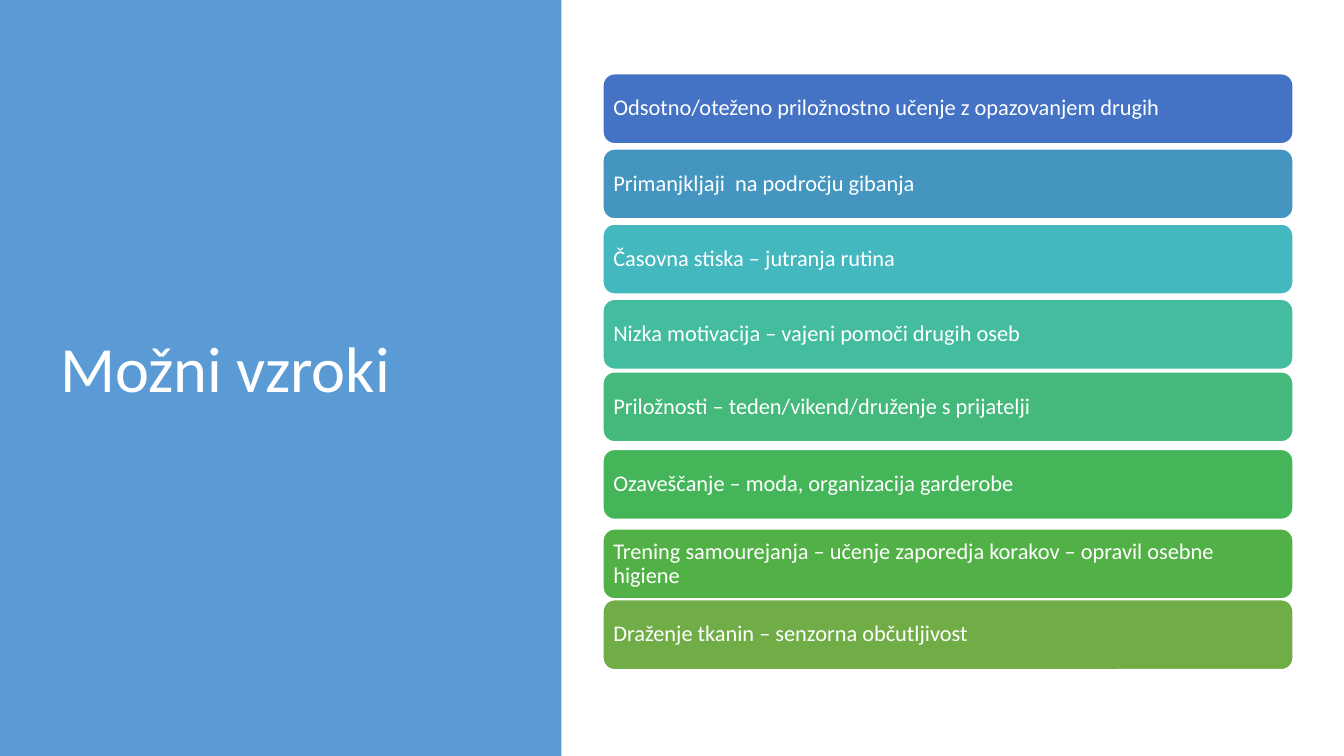
from pptx import Presentation, util as u
from pptx.dml.color import RGBColor
from pptx.enum import shapes, text

COLORS = {"panel": "5B9BD5", "white": "FFFFFF"}

# top in points, fill, wording
CAUSES = [
    (52.7, "4472C4", "Odsotno/oteženo priložnostno učenje z opazovanjem drugih"),
    (106.4, "4496C1", "Primanjkljaji  na področju gibanja"),
    (160.1, "43B8BF", "Časovna stiska – jutranja rutina"),
    (213.8, "43BCA0", "Nizka motivacija – vajeni pomoči drugih oseb"),
    (265.6, "44B97B", "Priložnosti – teden/vikend/druženje s prijatelji"),
    (321, "45B559", "Ozaveščanje – moda, organizacija garderobe"),
    (377.8, "52B146", "Trening samourejanja – učenje zaporedja korakov – opravil osebne higiene"),
    (428.4, "70AD47", "Draženje tkanin – senzorna občutljivost"),
]


class SlideBuilder:
    font = "Calibri"

    def __init__(self, page):
        self.page = page

    def set_text(self, box, words, size, inset):
        frame = box.text_frame
        frame.word_wrap = True
        frame.vertical_anchor = text.MSO_ANCHOR.MIDDLE
        frame.margin_left = frame.margin_right = u.Pt(inset)
        frame.margin_top = frame.margin_bottom = u.Pt(5)
        para = frame.paragraphs[0]
        para.text = words
        para.alignment = text.PP_ALIGN.LEFT
        para.line_spacing = 0.9
        para.font.name = self.font
        para.font.size = u.Pt(size)
        para.font.color.rgb = RGBColor.from_string(COLORS["white"])

    def shape(self, kind, left, top, width, height, fill):
        shape = self.page.shapes.add_shape(
            kind, u.Pt(left), u.Pt(top), u.Pt(width), u.Pt(height))
        shape.shadow.inherit = False
        shape.fill.solid()
        shape.fill.fore_color.rgb = RGBColor.from_string(fill)
        return shape

    def panel(self, width, height):
        panel = self.shape(shapes.MSO_SHAPE.RECTANGLE, 0, 0, width, height, COLORS["panel"])
        panel.line.fill.background()

    def title(self, left, top, width, height, words):
        box = self.page.shapes.add_textbox(
            u.Pt(left), u.Pt(top), u.Pt(width), u.Pt(height))
        self.set_text(box, words, 46, 7.2)

    def bar(self, top, fill, words):
        bar = self.shape(shapes.MSO_SHAPE.ROUNDED_RECTANGLE, 430.7, top, 493, 50, fill)
        bar.line.color.rgb = RGBColor.from_string(COLORS["white"])
        bar.line.width = u.Pt(1)
        self.set_text(bar, words, 16, 5)


def main():
    deck = Presentation()
    deck.slide_width, deck.slide_height = u.Pt(960), u.Pt(540)
    builder = SlideBuilder(deck.slides.add_slide(deck.slide_layouts[6]))
    builder.panel(401, 540)
    builder.title(36, 49, 299.5, 433.4, "Možni vzroki")
    for top, fill, words in CAUSES:
        builder.bar(top, fill, words)
    deck.save("out.pptx")


if __name__ == "__main__":
    main()
